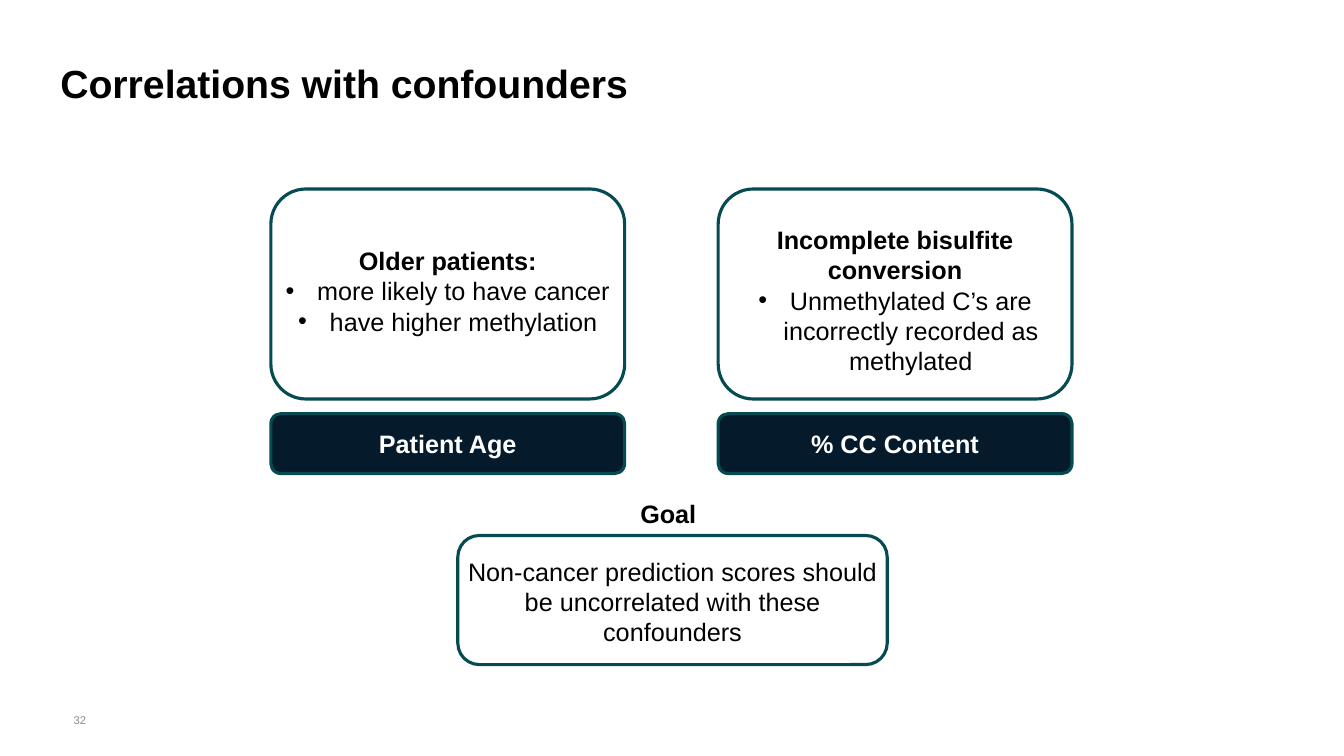
from lxml.etree import SubElement
from pptx import Presentation
from pptx.dml.color import RGBColor
from pptx.enum.shapes import MSO_SHAPE as Shape
from pptx.enum.text import MSO_ANCHOR as Anchor, PP_ALIGN as Align
from pptx.oxml.ns import qn
from pptx.util import Pt

PX = 9525
BULLET_INDENT = 30
COLORS = {"paper": "FEFFFE", "ink": "000000", "navy": "051A2B",
          "teal": "074B52", "gray": "8C8C8C"}
CONFOUNDERS = [
    ("Patient Age", "Older patients:",
     ["more likely to have cancer", "have higher methylation"], 49, 97),
    ("% CC Content", "Incomplete bisulfite conversion",
     ["Unmethylated C’s are incorrectly recorded as methylated"], 29, 156),
]


def color(name):
    """Return the named palette colour."""
    return RGBColor.from_string(COLORS[name])


def add_bullet(paragraph):
    """Give a paragraph a round bullet with a hanging indent."""
    properties = paragraph._p.get_or_add_pPr()
    properties.set("marL", str(BULLET_INDENT * PX))
    properties.set("indent", str(-BULLET_INDENT * PX))
    SubElement(properties, qn("a:buFont")).set("typeface", "Arial")
    SubElement(properties, qn("a:buChar")).set("char", "•")


def write(frame, lines, size=18, ink="ink", align=Align.CENTER, anchor=Anchor.MIDDLE):
    """Fill a text frame with (text, bold, bulleted) lines."""
    frame.word_wrap = True
    frame.vertical_anchor = anchor
    for index, (text, bold, bulleted) in enumerate(lines):
        paragraph = frame.add_paragraph() if index else frame.paragraphs[0]
        paragraph.alignment = align
        if bulleted:
            add_bullet(paragraph)
        run = paragraph.add_run()
        run.text = text
        run.font.name = "Arial"
        run.font.size = Pt(size)
        run.font.bold = bold
        run.font.color.rgb = color(ink)


def add_text(slide, left, top, width, height, lines, **style):
    """Place a text box holding the given lines."""
    box = slide.shapes.add_textbox(left * PX, top * PX, width * PX, height * PX)
    write(box.text_frame, lines, **style)


def add_panel(slide, left, top, width, height, fill=None):
    """Place a teal-edged rounded rectangle, hollow unless filled."""
    panel = slide.shapes.add_shape(Shape.ROUNDED_RECTANGLE, left * PX, top * PX,
                                   width * PX, height * PX)
    panel.shadow.inherit = False
    panel.line.color.rgb = color("teal")
    panel.line.width = Pt(2.25)
    if fill:
        panel.fill.solid()
        panel.fill.fore_color.rgb = color(fill)
    else:
        panel.fill.background()
    return panel


def add_confounder(slide, left, top, width, confounder):
    """Draw one confounder: an explanation panel above its name plate."""
    name, heading, points, text_offset, text_height = confounder
    plate = add_panel(slide, left, top + 214, width, 57, "navy")
    write(plate.text_frame, [(name, True, False)], ink="paper")
    add_panel(slide, left, top, width, 200)
    lines = [(heading, True, False)] + [(point, False, True) for point in points]
    add_text(slide, left, top + text_offset, width, text_height, lines,
             anchor=Anchor.TOP)


def add_goal(slide, left, top, width):
    """Draw the goal heading above its panel."""
    add_panel(slide, left, top + 40, width, 123)
    add_text(slide, left, top + 55, width, 97,
             [("Non-cancer prediction scores should be uncorrelated "
               "with these confounders", False, False)], anchor=Anchor.TOP)
    add_text(slide, left - 4, top, width, 38, [("Goal", True, False)],
             anchor=Anchor.TOP)


def add_frame(slide):
    """Add the background, title and slide number."""
    slide.background.fill.solid()
    slide.background.fill.fore_color.rgb = color("paper")
    add_text(slide, 48, 49, 1184, 60, [("Correlations with confounders", True, False)],
             size=28, align=Align.LEFT)
    add_text(slide, 50, 667, 52, 38, [("32", False, False)], size=8, ink="gray")


def main():
    """Build the slide and save it."""
    presentation = Presentation()
    presentation.slide_width = 1280 * PX
    presentation.slide_height = 720 * PX
    slide = presentation.slides.add_slide(presentation.slide_layouts[6])
    add_frame(slide)
    for column, confounder in enumerate(CONFOUNDERS):
        add_confounder(slide, 258 + column * 426, 180, 337, confounder)
    add_goal(slide, 436, 470, 409)
    presentation.save("out.pptx")


if __name__ == "__main__":
    main()
